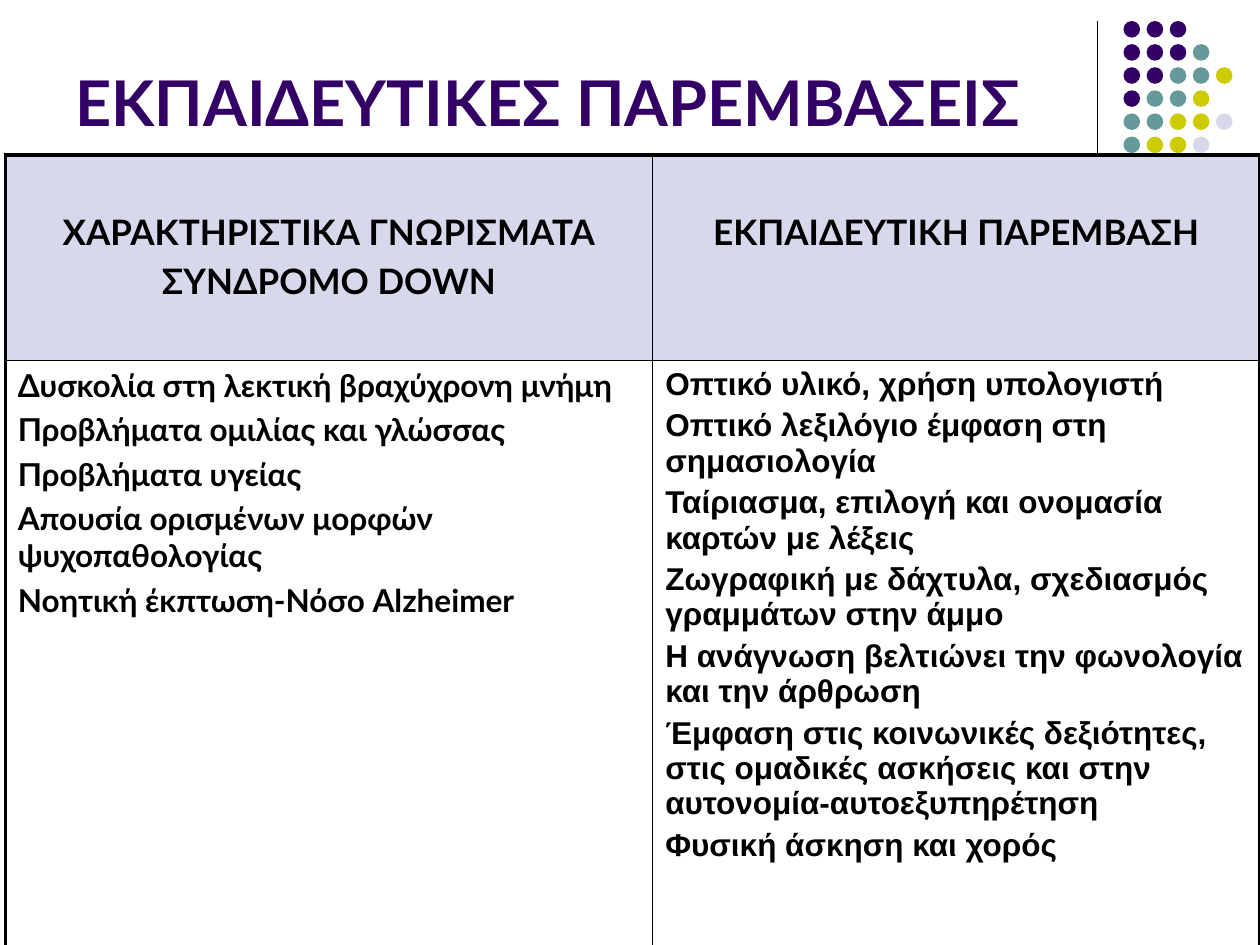
"""Builds a slide with a two-column table of educational interventions."""
from lxml import etree
from pptx import Presentation
from pptx.dml.color import RGBColor
from pptx.enum.shapes import MSO_CONNECTOR, MSO_SHAPE
from pptx.enum.text import MSO_ANCHOR, PP_ALIGN
from pptx.oxml.ns import qn
from pptx.util import Pt

STRAIGHT = MSO_CONNECTOR.STRAIGHT
OVAL = MSO_SHAPE.OVAL
BOTTOM, TOP = MSO_ANCHOR.BOTTOM, MSO_ANCHOR.TOP
LEFT, CENTER = PP_ALIGN.LEFT, PP_ALIGN.CENTER

COLORS = {
    "purple": "330066",
    "teal": "669999",
    "lime": "CCCC00",
    "lavender": "D8D8EC",
    "black": "000000",
    "white": "FFFFFF",
}
DOT_COLORS = {"P": "purple", "T": "teal", "L": "lime", "V": "lavender"}
DOT_ROWS = ["PPP", "PPPT", "PPTTL", "PTTL", "TTLLV", "TLLV"]
HEADERS = [
    ["ΧΑΡΑΚΤΗΡΙΣΤΙΚΑ ΓΝΩΡΙΣΜΑΤΑ", "ΣΥΝΔΡΟΜΟ DOWN"],
    ["ΕKΠΑΙΔΕΥΤΙΚΗ ΠΑΡΕΜΒΑΣΗ"],
]
CHARACTERISTICS = [
    "Δυσκολία στη λεκτική βραχύχρονη μνήμη",
    "Προβλήματα ομιλίας και γλώσσας",
    "Προβλήματα υγείας",
    "Απουσία ορισμένων μορφών ψυχοπαθολογίας",
    "Νοητική έκπτωση-Νόσο Alzheimer",
]
INTERVENTIONS = [
    "Οπτικό υλικό, χρήση υπολογιστή",
    "Οπτικό λεξιλόγιο έμφαση στη σημασιολογία",
    "Ταίριασμα, επιλογή και ονομασία καρτών με λέξεις",
    "Ζωγραφική με δάχτυλα, σχεδιασμός γραμμάτων στην άμμο",
    "Η ανάγνωση βελτιώνει την φωνολογία και την άρθρωση",
    "Έμφαση στις κοινωνικές δεξιότητες, στις ομαδικές ασκήσεις και στην "
    "αυτονομία-αυτοεξυπηρέτηση",
    "Φυσική άσκηση και χορός",
]


class SlideBuilder:
    """Holds the style and the current slide."""

    heading_font = "Lato"
    body_font = "Arial"
    thick, thin = 2.25, 1

    def __init__(self, slide):
        """Keep the slide to draw on."""
        self.slide = slide

    def color(self, name):
        """Return a named colour."""
        return RGBColor.from_string(COLORS[name])

    def add_text(self, paragraph, text, size, font, color="black"):
        """Add one bold run."""
        run = paragraph.add_run()
        run.text = text
        run.font.size = Pt(size)
        run.font.name = font
        run.font.bold = True
        run.font.color.rgb = self.color(color)

    def title(self, text, left, top, width, height):
        """Place and fill the title placeholder."""
        shape = self.slide.shapes.title
        shape.left, shape.top = Pt(left), Pt(top)
        shape.width, shape.height = Pt(width), Pt(height)
        shape.text_frame.vertical_anchor = BOTTOM
        paragraph = shape.text_frame.paragraphs[0]
        paragraph.alignment = LEFT
        self.add_text(paragraph, text, 36, self.heading_font, "purple")

    def vertical_line(self, left, top, bottom):
        """Draw a thin black vertical line."""
        line = self.slide.shapes.add_connector(
            STRAIGHT, Pt(left), Pt(top), Pt(left), Pt(bottom))
        line.line.color.rgb = self.color("black")
        line.line.width = Pt(0.75)
        etree.SubElement(line._element.spPr, qn("a:effectLst"))

    def dots(self, rows, left, top, pitch, size):
        """Draw a grid of coloured dots."""
        for row, codes in enumerate(rows):
            for column, code in enumerate(codes):
                dot = self.slide.shapes.add_shape(
                    OVAL, Pt(left + column * pitch), Pt(top + row * pitch),
                    Pt(size), Pt(size))
                dot.shadow.inherit = False
                dot.fill.solid()
                dot.fill.fore_color.rgb = self.color(DOT_COLORS[code])
                dot.line.fill.background()

    def table(self, left, top, widths, heights):
        """Add a table without banding and return it."""
        table = self.slide.shapes.add_table(
            len(heights), len(widths), Pt(left), Pt(top),
            Pt(sum(widths)), Pt(sum(heights))).table
        table.first_row = table.horz_banding = False
        for column, width in zip(table.columns, widths):
            column.width = Pt(width)
        for row, height in zip(table.rows, heights):
            row.height = Pt(height)
        return table

    def borders(self, cell, widths):
        """Set the left, right, top and bottom borders."""
        properties = cell._tc.get_or_add_tcPr()
        for index, (side, width) in enumerate(zip("LRTB", widths)):
            border = etree.Element(qn(f"a:ln{side}"), w=str(Pt(width)))
            fill = etree.SubElement(border, qn("a:solidFill"))
            etree.SubElement(fill, qn("a:srgbClr"), val=COLORS["black"])
            properties.insert(index, border)

    def cell(self, cell, lines, size, font, fill, alignment, margin_top=3.6):
        """Fill a cell with one paragraph per line."""
        cell.fill.solid()
        cell.fill.fore_color.rgb = self.color(fill)
        cell.vertical_anchor = TOP
        cell.margin_top = Pt(margin_top)
        frame = cell.text_frame
        for index, text in enumerate(lines):
            paragraph = frame.add_paragraph() if index else frame.paragraphs[0]
            paragraph.alignment = alignment
            paragraph.space_before = Pt(0.2 * size if index else 0)
            self.add_text(paragraph, text, size, font)


def main():
    """Build and save the slide."""
    presentation = Presentation()
    presentation.slide_width, presentation.slide_height = Pt(720), Pt(540)
    slide = presentation.slides.add_slide(presentation.slide_layouts[5])
    builder = SlideBuilder(slide)
    thick, thin = builder.thick, builder.thin

    builder.vertical_line(627, 12, 88.5)
    builder.dots(DOT_ROWS, 642, 12, 13.2, 9.5)
    builder.title("ΕΚΠΑΙΔΕΥΤΙΚΕΣ ΠΑΡΕΜΒΑΣΕΙΣ", 36, 9.5, 594, 73.5)

    table = builder.table(3, 88.5, [370, 347], [117.5, 340])
    for column, lines in enumerate(HEADERS):
        builder.cell(table.cell(0, column), lines, 20, builder.heading_font,
                     "lavender", CENTER, margin_top=32)
    builder.cell(table.cell(1, 0), CHARACTERISTICS, 18, builder.heading_font,
                 "white", LEFT)
    builder.cell(table.cell(1, 1), INTERVENTIONS, 18, builder.body_font,
                 "white", LEFT)
    for row, vertical in enumerate([(thick, thin), (thin, thick)]):
        for column, horizontal in enumerate([(thick, thin), (thin, thick)]):
            builder.borders(table.cell(row, column), horizontal + vertical)

    presentation.save("out.pptx")


if __name__ == "__main__":
    main()
